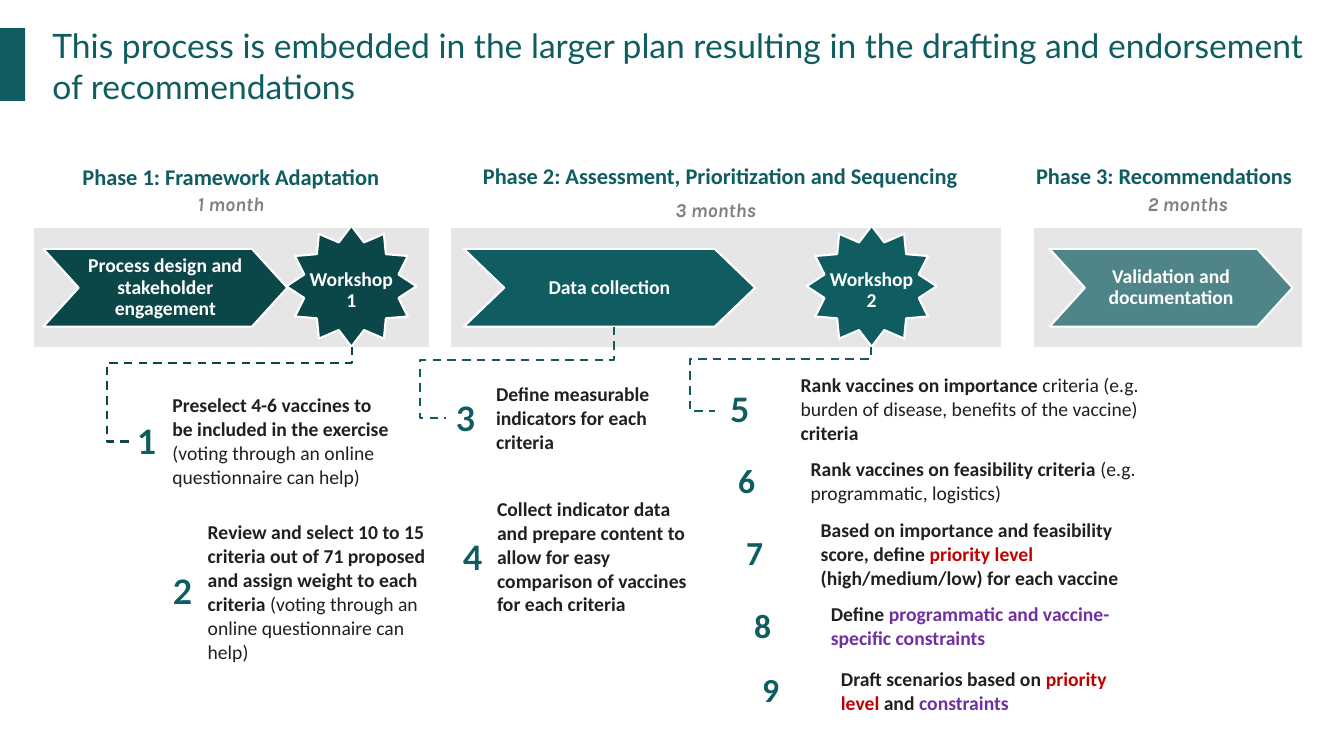
from lxml import etree
from pptx import Presentation
from pptx.dml.color import RGBColor
from pptx.enum.dml import MSO_LINE
from pptx.enum.shapes import MSO_CONNECTOR, MSO_SHAPE
from pptx.enum.text import MSO_ANCHOR, PP_ALIGN
from pptx.oxml.ns import qn
from pptx.util import Inches, Pt

TEAL = RGBColor(0x0F, 0x5D, 0x61)
DARK = RGBColor(0x0B, 0x46, 0x49)
BAND = RGBColor(0xE6, 0xE6, 0xE6)
GREY = RGBColor(0x80, 0x80, 0x80)
INK = RGBColor(0x20, 0x20, 0x20)
RED = RGBColor(0xC0, 0x00, 0x00)
PURPLE = RGBColor(0x70, 0x30, 0xA0)
WHITE = RGBColor(0xFF, 0xFF, 0xFF)
RECT, STAR = MSO_SHAPE.RECTANGLE, MSO_SHAPE.STAR_12_POINT
CENTER, LEFT = PP_ALIGN.CENTER, PP_ALIGN.LEFT
TOP, MIDDLE = MSO_ANCHOR.TOP, MSO_ANCHOR.MIDDLE
ELBOW, DASH = MSO_CONNECTOR.ELBOW, MSO_LINE.DASH

# Content
TITLE = ("This process is embedded in the larger plan resulting in the drafting "
         "and endorsement of recommendations")

# name, name box (left, top, width), duration, duration box (left, top), band (left, width)
PHASES = [
    ("Phase 1: Framework Adaptation", (0.32, 1.51, 3.94), "1 month", (0.92, 1.85), (0.33, 3.94)),
    ("Phase 2: Assessment, Prioritization and Sequencing", (4.36, 1.5, 5.57),
     "3 months", (5.73, 1.91), (4.46, 5.48)),
    ("Phase 3: Recommendations", (9.93, 1.5, 3.23), "2 months", (10.41, 1.85), (10.24, 2.68)),
]
# text, left, width, point depth, colour, opacity in percent
CHEVRONS = [
    ("Process design and stakeholder engagement", 0.43, 2.42, 0.35, DARK, 100),
    ("Data collection", 4.6, 2.89, 0.4, TEAL, 100),
    ("Validation and documentation", 10.41, 2.41, 0.35, TEAL, 70),
]
WORKSHOPS = [("Workshop\n1", 2.84, DARK), ("Workshop\n2", 8, TEAL)]

BOLD, PLAIN = (INK, True), (INK, False)
LEVEL, LIMIT = (RED, True), (PURPLE, True)
# left, top, column widths, number alignment, rows of (number, height, runs)
STEP_TABLES = [
    (1.31, 3.75, (0.3, 2.41, 0.29), CENTER, [
        (1, 1.27, [("Preselect 4-6 vaccines to be included in the exercise", BOLD),
                   (" (voting through an online questionnaire can help)", PLAIN)])]),
    (1.66, 5.12, (0.3, 2.41, 0.29), CENTER, [
        (2, 1.5, [("Review and select 10 to 15 criteria out of 71 proposed and assign "
                   "weight to each criteria ", BOLD),
                  ("(voting through an online questionnaire can help)", PLAIN)])]),
    (4.42, 3.75, (0.4, 1.92, 0.25), CENTER, [
        (3, 0.8, [("Define measurable indicators for each criteria", BOLD)])]),
    (4.55, 4.78, (0.28, 2.2, 0.26), CENTER, [
        (4, 1.5, [("Collect indicator data and prepare content to allow for easy "
                   "comparison of vaccines for each criteria", BOLD)])]),
    (7.24, 3.66, (0.6, 3.64, 0.45), LEFT, [
        (5, 0.8, [("Rank vaccines on importance", BOLD),
                  (" criteria (e.g. burden of disease, benefits of the vaccine)", PLAIN),
                  (" criteria", BOLD)]),
        (6, 0.64, [("Rank vaccines on feasibility criteria ", BOLD),
                   ("(e.g. programmatic, logistics)", PLAIN)]),
        (7, 0.8, [("Based on importance and feasibility score, define ", BOLD),
                  ("priority level ", LEVEL),
                  ("(high/medium/low) for each vaccine", BOLD)]),
        (8, 0.64, [("Define ", BOLD),
                   ("programmatic and vaccine-specific constraints", LIMIT)]),
        (9, 0.64, [("Draft scenarios based on ", BOLD), ("priority level ", LEVEL),
                   ("and ", BOLD), ("constraints", LIMIT)])]),
]
# start, end, y of the horizontal run, x of the left run, colour
LINKS = [
    ((3.49, 3.44), (1.31, 4.38), 3.6, 1.06, DARK),
    ((6.09, 3.24), (4.42, 4.15), 3.57, 4.17, TEAL),
    ((8.64, 3.44), (7.09, 4.08), 3.56, 6.84, TEAL),
]
BAND_TOP, BAND_H = 2.25, 1.2
CHEVRON_TOP, CHEVRON_H = 2.47, 0.77
NUMBER_STEP, TEXT_STEP = 0.08, 0.1  # extra indent for each further row
PAD = (0.3, 0.03, 0.3, 0.03)

prs = Presentation()
prs.slide_width, prs.slide_height = Inches(13.33), Inches(7.5)
slide = prs.slides.add_slide(prs.slide_layouts[6])
shapes = slide.shapes


def style(r, size, color, bold=False, font="Calibri", italic=False):
    f = r.font
    f.size, f.bold, f.italic, f.name = Pt(size), bold, italic, font
    f.color.rgb = color


def set_text(s, text, size, color, insets, align=CENTER, anchor=MIDDLE, spacing=0.9,
             wrap=True, **font):
    tf = s.text_frame
    tf.text = text
    tf.word_wrap, tf.vertical_anchor = wrap, anchor
    tf.margin_left, tf.margin_top, tf.margin_right, tf.margin_bottom = map(Inches, insets)
    for p in tf.paragraphs:
        p.alignment, p.line_spacing = align, spacing
        style(p.runs[0], size, color, **font)


def paint(s, color, outlined=True):
    s.shadow.inherit = False
    s.fill.solid()
    s.fill.fore_color.rgb = color
    if outlined:
        s.line.color.rgb, s.line.width = WHITE, Pt(1.5)
    else:
        s.line.fill.background()


def add_box(kind, *at):
    return shapes.add_shape(kind, *map(Inches, at))


def add_label(*at):
    return shapes.add_textbox(*map(Inches, at))


# Title with side marker
paint(add_box(RECT, -0.01, 0.28, 0.26, 0.72), TEAL, outlined=False)
set_text(add_label(0.52, 0.25, 12.55, 0.8), TITLE, 24, TEAL, (0, 0, 0, 0), LEFT, TOP, 1.0,
         font="Lato")

# Phase bands, names and durations
for name, name_at, duration, duration_at, (left, width) in PHASES:
    paint(add_box(RECT, left, BAND_TOP, width, BAND_H), BAND)
    set_text(add_label(*name_at, 0.51), name, 16, TEAL, PAD, bold=True)
    set_text(add_label(*duration_at, 2.74, 0.29), duration, 14, GREY, (0.1, 0.05, 0.1, 0.05),
             anchor=TOP, spacing=1.0, bold=True, italic=True, font="Karla")

# Notched arrows
for text, left, width, depth, color, opacity in CHEVRONS:
    right, mid, bottom = left + width, CHEVRON_TOP + CHEVRON_H / 2, CHEVRON_TOP + CHEVRON_H
    outline = [(right - depth, CHEVRON_TOP), (right, mid), (right - depth, bottom),
               (left, bottom), (left + depth, mid)]
    fb = shapes.build_freeform(Inches(left), Inches(CHEVRON_TOP))
    fb.add_line_segments([(Inches(x), Inches(y)) for x, y in outline], close=True)
    s = fb.convert_to_shape()
    paint(s, color)
    if opacity < 100:
        rgb = s._element.spPr.find(qn("a:solidFill"))[0]
        etree.SubElement(rgb, qn("a:alpha"), val=str(opacity * 1000))
    set_text(s, text, 14, WHITE, PAD, bold=True)

# Workshop stars
for text, left, color in WORKSHOPS:
    s = add_box(STAR, left, 2.24, 1.29, BAND_H)
    paint(s, color)
    set_text(s, text, 14, WHITE, (0, 0.09, 0, 0), wrap=False, bold=True)

# Numbered steps
for left, top, widths, align, rows in STEP_TABLES:
    height = sum(row[1] for row in rows)
    table = shapes.add_table(len(rows), len(widths), *map(Inches, (left, top, sum(widths), height))).table
    table.first_row = table.horz_banding = False
    for column, width in zip(table.columns, widths):
        column.width = Inches(width)
    for i, (number, row_h, runs) in enumerate(rows):
        table.rows[i].height = Inches(row_h)
        for cell in table.rows[i].cells:
            cell.fill.solid()
            cell.fill.fore_color.rgb = WHITE
            cell.vertical_anchor = MIDDLE
        cell = table.cell(i, 0)
        cell.margin_top = cell.margin_right = cell.margin_bottom = 0
        cell.margin_left = Inches(NUMBER_STEP * i)
        p = cell.text_frame.paragraphs[0]
        p.text, p.alignment = str(number), align
        style(p.runs[0], 24, TEAL, True, "Calibri" if i else "Lato")
        cell = table.cell(i, 1)
        cell.margin_left = Inches(0.1 + TEXT_STEP * i)
        for text, (color, bold) in runs:
            r = cell.text_frame.paragraphs[0].add_run()
            r.text = text
            style(r, 14, color, bold)

# Dashed elbows: a four-part connector turned by 90 degrees about its centre
for (x1, y1), (x2, y2), turn_y, turn_x, color in LINKS:
    run, drop = x1 - x2, y2 - y1
    left, top = (x1 + x2 - drop) / 2, (y1 + y2 - run) / 2
    c = shapes.add_connector(ELBOW, *map(Inches, (left, top, left + drop, top + run)))
    c.line.color.rgb, c.line.width, c.line.dash_style = color, Pt(1.5), DASH
    spPr = c._element.spPr
    spPr.find(qn("a:xfrm")).set("rot", str(90 * 60000))
    geom = spPr.find(qn("a:prstGeom"))
    geom.set("prst", "bentConnector4")
    guides = geom.find(qn("a:avLst"))
    for name, share in (("adj1", (turn_y - y1) / drop), ("adj2", (x1 - turn_x) / run)):
        etree.SubElement(guides, qn("a:gd"), name=name, fmla=f"val {round(share * 100000)}")
    etree.SubElement(spPr, qn("a:effectLst"))

prs.save("out.pptx")
